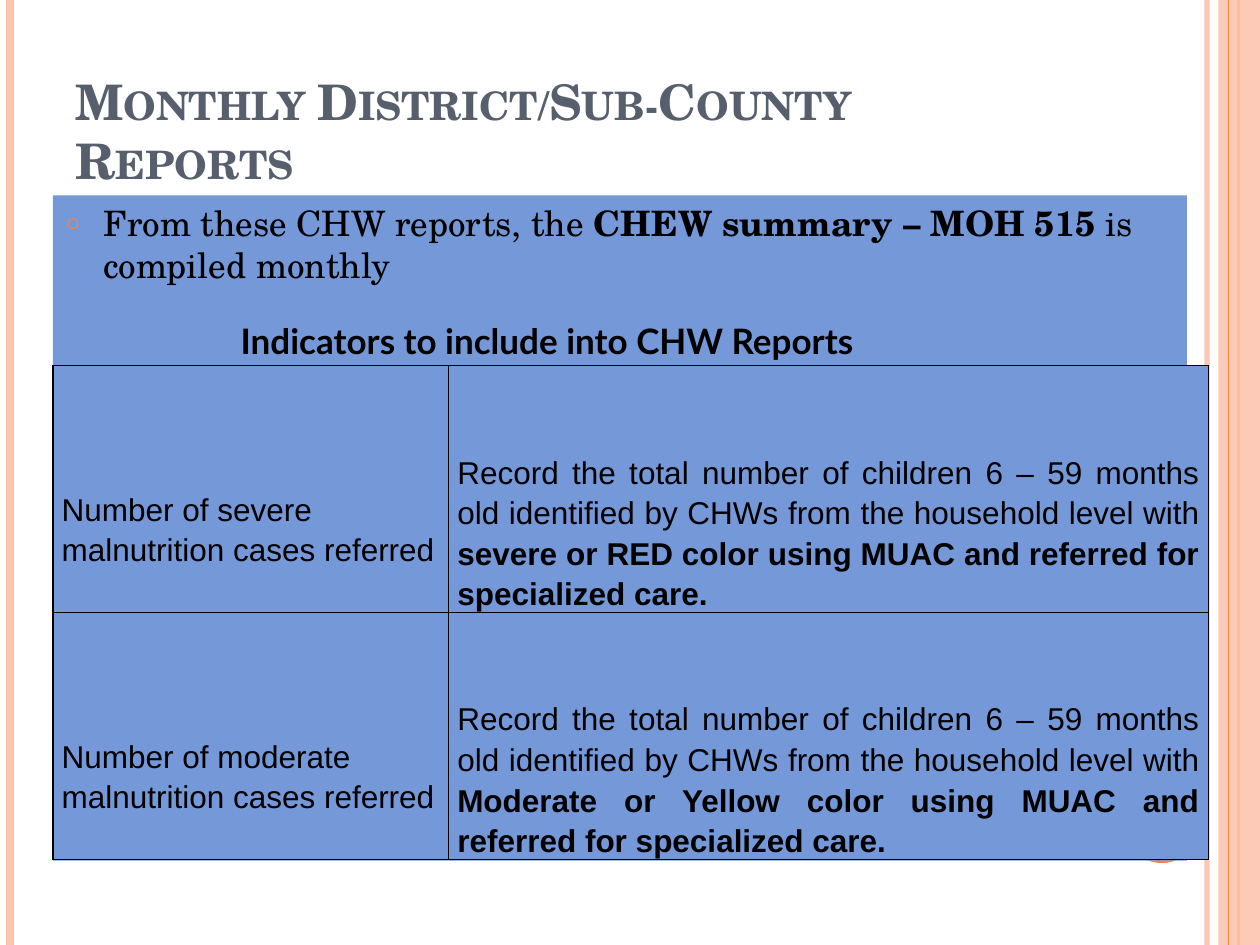
from typing import NamedTuple

from lxml.etree import SubElement
from pptx import Presentation
from pptx.dml.color import RGBColor
from pptx.enum.shapes import MSO_CONNECTOR as CONN, MSO_SHAPE as SHAPE
from pptx.enum.text import MSO_ANCHOR as ANCHOR, MSO_AUTO_SIZE as FIT, PP_ALIGN as ALIGN
from pptx.oxml import parse_xml
from pptx.oxml.ns import nsdecls, qn
from pptx.util import Inches, Pt

SERIF, SANS, HEADING = "TeX Gyre Schola", "Arial", "Lato"
PEACH, ORANGE, BLUE, SLATE, BLACK = "FEC3AE", "FE8637", "7598D9", "575F6D", "000000"


class Stripe(NamedTuple):
    x: float
    color: str
    width: float
    opacity: int = 100


class Indicator(NamedTuple):
    name: str
    rule: str


LEFT_STRIPES = [Stripe(9.58, PEACH, 3, 93), Stripe(0.08, PEACH, 4.5), Stripe(9.83, ORANGE, 1.5)]
BAND_STRIPE = Stripe(9.75, ORANGE, 0.75)
RECORD = ("Record the total number of children 6 – 59 months old identified by CHWs "
          "from the household level with ")
INDICATORS = [
    Indicator("Number of severe malnutrition cases referred",
              "severe or RED color using MUAC and referred for specialized care."),
    Indicator("Number of moderate malnutrition cases referred",
              "Moderate or Yellow color using MUAC and referred for specialized care."),
]


def rgb(color: str) -> RGBColor:
    return RGBColor.from_string(color)


def set_opacity(fill_parent, percent: int) -> None:
    if percent < 100:
        clr = fill_parent.find(".//" + qn("a:srgbClr"))
        SubElement(clr, qn("a:alpha"), val=str(percent * 1000))


def place(sp, x: float, y: float, w: float, h: float) -> None:
    sp.left, sp.top, sp.width, sp.height = map(Inches, (x, y, w, h))


def add_run(p, text: str, font: str, size: float, color: str = BLACK, bold: bool = False):
    r = p.add_run()
    r.text = text
    r.font.name, r.font.size, r.font.bold = font, Pt(size), bold
    r.font.color.rgb = rgb(color)
    return r


def add_stripe(slide, stripe: Stripe) -> None:
    x = Inches(stripe.x)
    line = slide.shapes.add_connector(CONN.STRAIGHT, x, 0, x, Inches(7.5))
    line.line.color.rgb = rgb(stripe.color)
    line.line.width = Pt(stripe.width)
    sp_pr = line._element.spPr
    set_opacity(sp_pr, stripe.opacity)
    SubElement(sp_pr, qn("a:effectLst"))


def add_block(slide, shape, x: float, y: float, w: float, h: float, color: str,
              opacity: int = 100) -> None:
    sp = slide.shapes.add_shape(shape, *map(Inches, (x, y, w, h)))
    sp.shadow.inherit = False
    sp.fill.solid()
    sp.fill.fore_color.rgb = rgb(color)
    sp.line.fill.background()
    set_opacity(sp._element.spPr, opacity)


def send_to_back(sp) -> None:
    """Order a placeholder after the shapes drawn so far."""
    tree = sp._element.getparent()
    tree.append(sp._element)


def fill_title(title) -> None:
    send_to_back(title)
    place(title, 0.5, 0.3, 8.17, 1.25)
    tf = title.text_frame
    tf.auto_size, tf.vertical_anchor = FIT.NONE, ANCHOR.BOTTOM
    p = tf.paragraphs[0]
    p.alignment = ALIGN.LEFT
    r = add_run(p, "Monthly District/Sub-County Reports", SERIF, 28, SLATE, True)
    r.font._element.set("cap", "small")


def fill_body(body) -> None:
    send_to_back(body)
    place(body, 0.42, 1.55, 9, 5.28)
    body.fill.solid()
    body.fill.fore_color.rgb = rgb(BLUE)
    tf = body.text_frame
    tf.auto_size, tf.vertical_anchor = FIT.NONE, ANCHOR.TOP
    p = tf.paragraphs[0]
    p.space_before = Pt(6)
    p_pr = p._p.get_or_add_pPr()
    p_pr.set("marL", str(Inches(0.3)))
    p_pr.set("indent", str(-Inches(0.3)))
    SubElement(SubElement(p_pr, qn("a:buClr")), qn("a:srgbClr"), val=ORANGE)
    SubElement(p_pr, qn("a:buSzPct"), val="70000")
    SubElement(p_pr, qn("a:buChar"), char="○")
    add_run(p, "From these CHW reports, the ", SERIF, 20)
    add_run(p, "CHEW summary – MOH 515", SERIF, 20, bold=True)
    add_run(p, " is compiled monthly", SERIF, 20)


def format_cell(cell, anchor, align, margin_top: float = 0):
    """Style a cell and return its paragraph."""
    tc_pr = cell._tc.get_or_add_tcPr()
    for side in ("lnL", "lnR", "lnT", "lnB"):
        tc_pr.append(parse_xml(
            f'<a:{side} {nsdecls("a")} w="{Pt(1)}"><a:solidFill>'
            f'<a:srgbClr val="{BLACK}"/></a:solidFill></a:{side}>'))
    cell.fill.solid()
    cell.fill.fore_color.rgb = rgb(BLUE)
    cell.vertical_anchor = anchor
    cell.margin_left = cell.margin_right = Inches(0.07)
    cell.margin_top, cell.margin_bottom = Inches(margin_top), 0
    p = cell.text_frame.paragraphs[0]
    p.alignment, p.line_spacing = align, 1.15
    return p


def add_indicator_table(slide) -> None:
    frame = slide.shapes.add_table(len(INDICATORS), 2, *map(Inches, (0.42, 2.9, 9.17, 3.92)))
    table = frame.table
    table.first_row = table.horz_banding = False
    for column, width in zip(table.columns, (3.14, 6.03)):
        column.width = Inches(width)
    for i, item in enumerate(INDICATORS):
        table.rows[i].height = Inches(1.96)
        p = format_cell(table.cell(i, 0), ANCHOR.TOP, ALIGN.LEFT, margin_top=0.97)
        add_run(p, item.name, SANS, 18)
        p = format_cell(table.cell(i, 1), ANCHOR.BOTTOM, ALIGN.JUSTIFY)
        add_run(p, RECORD, SANS, 18)
        add_run(p, item.rule, SANS, 18, bold=True)


def add_table_heading(slide) -> None:
    box = slide.shapes.add_textbox(*map(Inches, (1.75, 2.48, 5.78, 0.44)))
    tf = box.text_frame
    tf.word_wrap, tf.vertical_anchor = False, ANCHOR.MIDDLE
    tf.auto_size = FIT.SHAPE_TO_FIT_TEXT
    p = tf.paragraphs[0]
    add_run(p, " ", HEADING, 18, bold=True)
    add_run(p, "Indicators to include into CHW Reports", HEADING, 20, bold=True)


def main() -> None:
    prs = Presentation()
    prs.slide_width, prs.slide_height = Inches(10), Inches(7.5)
    slide = prs.slides.add_slide(prs.slide_layouts[1])
    for stripe in LEFT_STRIPES:
        add_stripe(slide, stripe)
    add_block(slide, SHAPE.RECTANGLE, 9.67, 0, 0.33, 7.5, PEACH, 87)
    add_stripe(slide, BAND_STRIPE)
    add_block(slide, SHAPE.OVAL, 8.92, 6.25, 0.6, 0.6, ORANGE)
    fill_title(slide.shapes.title)
    fill_body(slide.placeholders[1])
    add_indicator_table(slide)
    add_table_heading(slide)
    prs.save("out.pptx")


if __name__ == "__main__":
    main()
